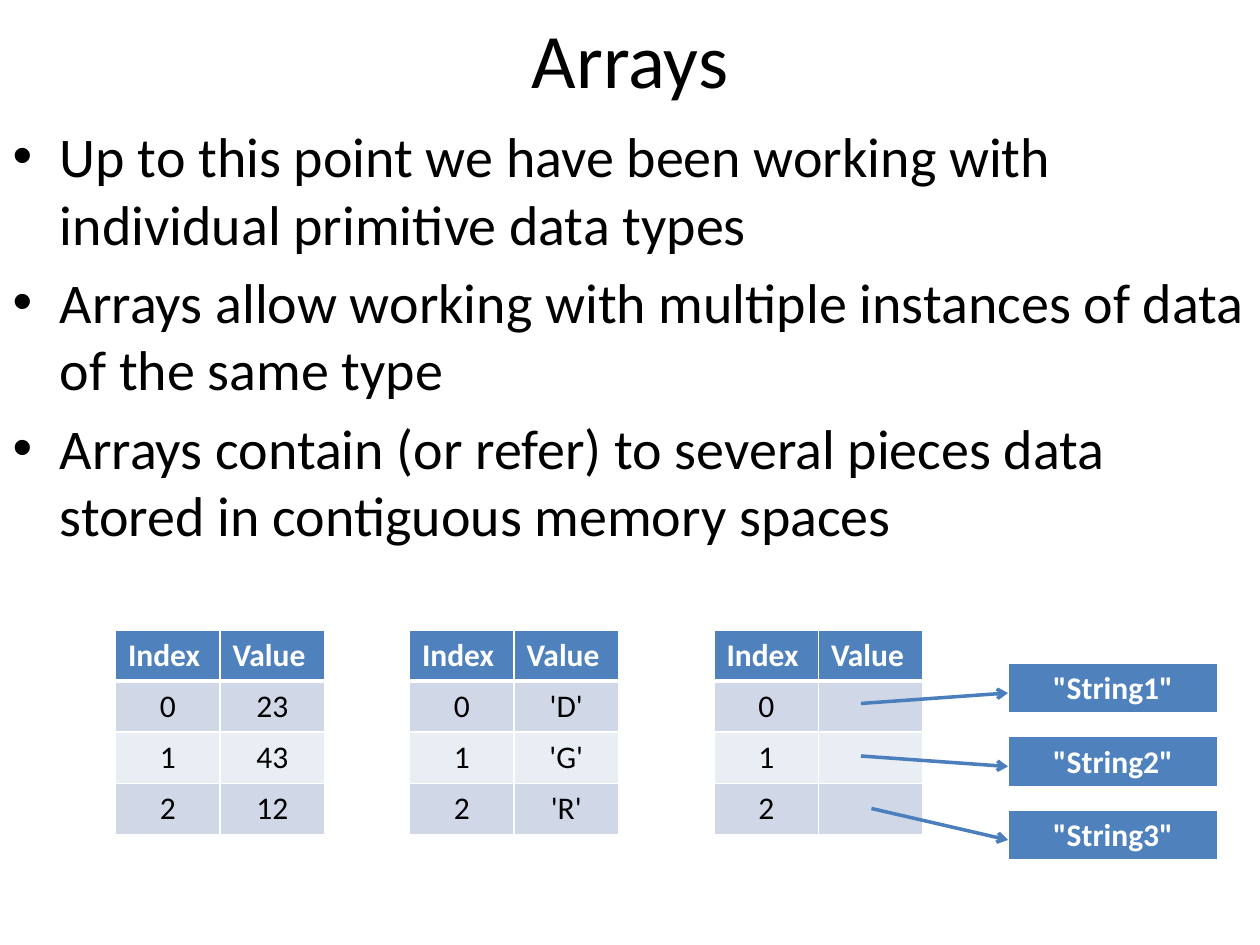
from dataclasses import dataclass

from lxml.etree import SubElement
from pptx import Presentation
from pptx.dml.color import RGBColor
from pptx.enum.shapes import MSO_CONNECTOR
from pptx.enum.text import MSO_ANCHOR, PP_ALIGN
from pptx.oxml import parse_xml
from pptx.oxml.ns import nsdecls, qn
from pptx.util import Pt


@dataclass(frozen=True)
class Theme:
    font: str = "Calibri"
    title_size: float = 44
    body_size: float = 32
    cell_size: float = 18
    text: str = "000000"
    header: str = "4F81BD"
    bands: tuple[str, str] = ("D0D8E8", "E9EDF4")
    white: str = "FFFFFF"
    arrow: str = "4B7EBC"


@dataclass(frozen=True)
class ArrayTable:
    left: float
    values: tuple[str, ...]


@dataclass(frozen=True)
class Arrow:
    x: float
    y: float
    end_y: float


THEME = Theme()
ROW_H = 29.2
ARRAY_TOP, ARRAY_COL_W = 360, 59.75
STRING_LEFT, STRING_TOP, STRING_W, STRING_STEP = 576, 379, 120, 42

BULLETS = (
    "Up to this point we have been working with individual primitive data types",
    "Arrays allow working with multiple instances of data of the same type",
    "Arrays contain (or refer) to several pieces data stored in contiguous memory spaces",
)
ARRAYS = (
    ArrayTable(66, ("23", "43", "12")),
    ArrayTable(234, ("'D'", "'G'", "'R'")),
    ArrayTable(408, ("", "", "")),
)
STRINGS = ('"String1"', '"String2"', '"String3"')
ARROWS = (Arrow(492, 402, 396), Arrow(492, 432, 438), Arrow(498, 462, 480))


def add_run(p, text: str, size: float, color: str, bold: bool = False) -> None:
    r = p.add_run()
    r.text = text
    r.font.name = THEME.font
    r.font.size = Pt(size)
    r.font.bold = bold
    r.font.color.rgb = RGBColor.from_string(color)


def place(sp, left: float, top: float, width: float, height: float) -> None:
    sp.left, sp.top, sp.width, sp.height = map(Pt, (left, top, width, height))


def set_borders(cell, top: float, bottom: float) -> None:
    tc_pr = cell._tc.get_or_add_tcPr()
    for i, (side, width) in enumerate(
        (("L", 1), ("R", 1), ("T", top), ("B", bottom))
    ):
        tc_pr.insert(i, parse_xml(
            f'<a:ln{side} {nsdecls("a")} w="{Pt(width)}"><a:solidFill>'
            f'<a:srgbClr val="{THEME.white}"/></a:solidFill></a:ln{side}>'
        ))


def add_grid(slide, left: float, top: float, col_w: float,
             rows: list[tuple[str, ...]], header_align: PP_ALIGN) -> None:
    """Draw a table whose first row is a header, above banded rows."""
    n_cols = len(rows[0])
    table = slide.shapes.add_table(
        len(rows), n_cols, Pt(left), Pt(top),
        Pt(col_w * n_cols), Pt(ROW_H * len(rows)),
    ).table
    for col in table.columns:
        col.width = Pt(col_w)
    for i, texts in enumerate(rows):
        table.rows[i].height = Pt(ROW_H)
        header = i == 0
        fill = THEME.header if header else THEME.bands[(i - 1) % 2]
        for j, text in enumerate(texts):
            cell = table.cell(i, j)
            cell.fill.solid()
            cell.fill.fore_color.rgb = RGBColor.from_string(fill)
            set_borders(cell, top=3 if i == 1 else 1, bottom=3 if header else 1)
            p = cell.text_frame.paragraphs[0]
            p.alignment = header_align if header else PP_ALIGN.CENTER
            if text:
                color = THEME.white if header else THEME.text
                add_run(p, text, THEME.cell_size, color, bold=header)


def add_arrow(slide, arrow: Arrow) -> None:
    line = slide.shapes.add_connector(
        MSO_CONNECTOR.STRAIGHT, Pt(arrow.x), Pt(arrow.y),
        Pt(STRING_LEFT), Pt(arrow.end_y),
    )
    line.line.color.rgb = RGBColor.from_string(THEME.arrow)
    line.line.width = Pt(2)
    SubElement(line.line._get_or_add_ln(), qn("a:tailEnd"), type="arrow")
    SubElement(line._element.spPr, qn("a:effectLst"))


def main() -> None:
    prs = Presentation()
    prs.slide_width, prs.slide_height = Pt(720), Pt(540)
    slide = prs.slides.add_slide(prs.slide_layouts[1])

    # Title
    title = slide.shapes.title
    place(title, 36, 0, 648, 66)
    title.text_frame.vertical_anchor = MSO_ANCHOR.MIDDLE
    p = title.text_frame.paragraphs[0]
    p.alignment = PP_ALIGN.CENTER
    add_run(p, "Arrays", THEME.title_size, THEME.text)

    # Bullet list
    body = slide.placeholders[1]
    place(body, 0, 66, 720, 474)
    tf = body.text_frame
    for i, text in enumerate(BULLETS):
        p = tf.add_paragraph() if i else tf.paragraphs[0]
        add_run(p, text, THEME.body_size, THEME.text)

    # Arrays of numbers, characters and references
    for array in ARRAYS:
        rows = [("Index", "Value")]
        rows += [(str(i), value) for i, value in enumerate(array.values)]
        add_grid(slide, array.left, ARRAY_TOP, ARRAY_COL_W, rows, PP_ALIGN.LEFT)

    # Strings that the last array refers to
    for i, text in enumerate(STRINGS):
        add_grid(slide, STRING_LEFT, STRING_TOP + i * STRING_STEP, STRING_W,
                 [(text,)], PP_ALIGN.CENTER)

    # References
    for arrow in ARROWS:
        add_arrow(slide, arrow)

    prs.save("out.pptx")


if __name__ == "__main__":
    main()
